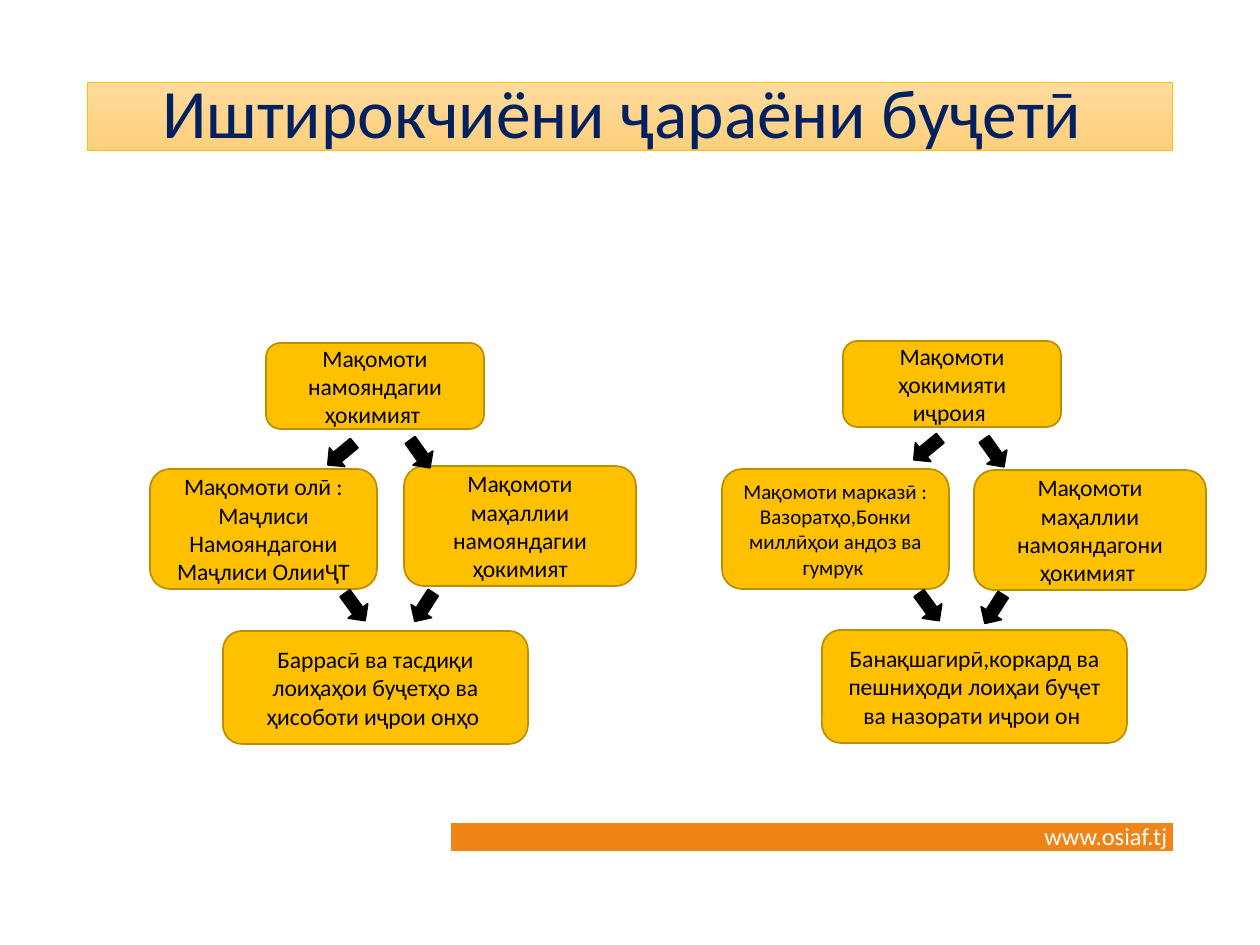
from typing import NamedTuple

from lxml.etree import SubElement
from pptx import Presentation
from pptx.dml.color import RGBColor
from pptx.enum.shapes import MSO_CONNECTOR, MSO_SHAPE
from pptx.enum.text import MSO_ANCHOR, PP_ALIGN
from pptx.oxml.ns import qn
from pptx.util import Emu, Pt

EMU_PER_INCH = 914400
PX_PER_INCH = 126
FONT = "Calibri"
BLACK = RGBColor(0x00, 0x00, 0x00)
WHITE = RGBColor(0xFF, 0xFF, 0xFF)
NAVY = RGBColor(0x00, 0x20, 0x60)
GOLD = RGBColor(0xFF, 0xC0, 0x00)
DARK_GOLD = RGBColor(0xBD, 0x8E, 0x00)
ORANGE = RGBColor(0xF0, 0x84, 0x16)
TITLE_TOP = RGBColor(0xFF, 0xDB, 0x9E)
TITLE_BOTTOM = RGBColor(0xFF, 0xD0, 0x7C)

HEAD_SIZE = (218, 86)
LEVEL_SIZE = (227, 120)
LOCAL_SIZE = (232, 120)
ROLE_SIZE = (305, 113)
ARROW_SIZE = (34, 24)


class Body(NamedTuple):
    left: int
    top: int
    size: tuple[int, int]
    text: str
    points: float = 13.5


class Arrow(NamedTuple):
    left: int
    top: int
    angle: float


BODIES = [
    Body(266, 343, HEAD_SIZE, "Мақомоти намояндагии ҳокимият "),
    Body(150, 469, LEVEL_SIZE, "Мақомоти олӣ : Маҷлиси Намояндагони Маҷлиси ОлииҶТ"),
    Body(404, 466, LOCAL_SIZE, "Мақомоти маҳаллии намояндагии ҳокимият"),
    Body(223, 631, ROLE_SIZE, "Баррасӣ ва тасдиқи лоиҳаҳои буҷетҳо ва ҳисоботи иҷрои онҳо "),
    Body(843, 341, HEAD_SIZE, "Мақомоти ҳокимияти иҷроия "),
    Body(722, 469, LEVEL_SIZE,
         "Мақомоти марказӣ : Вазоратҳо,Бонки миллӣҳои андоз ва гумрук ", 12),
    Body(974, 470, LOCAL_SIZE, "Мақомоти маҳаллии намояндагони ҳокимият "),
    Body(822, 630, ROLE_SIZE,
         "Банақшагирӣ,коркард ва пешниҳоди лоиҳаи буҷет ва назорати иҷрои он "),
]

ARROWS = [
    Arrow(324, 442, 140.5),
    Arrow(403, 442, 54.5),
    Arrow(338, 595, 53.7),
    Arrow(407, 595, 122.5),
    Arrow(910, 437, 140.5),
    Arrow(977, 441, 54.5),
    Arrow(912, 595, 53.7),
    Arrow(977, 597, 122.5),
]


def px(length: int) -> Emu:
    return Emu(round(length * EMU_PER_INCH / PX_PER_INCH))


def write(shape, text: str, *, points: float, color: RGBColor,
          align=PP_ALIGN.CENTER, anchor=MSO_ANCHOR.MIDDLE, spacing: float = 1.0) -> None:
    frame = shape.text_frame
    frame.word_wrap = True
    frame.vertical_anchor = anchor
    para = frame.paragraphs[0]
    para.alignment = align
    para.line_spacing = spacing
    span = para.add_run()
    span.text = text
    span.font.name = FONT
    span.font.size = Pt(points)
    span.font.color.rgb = color


def add_preset(slide, preset, left: int, top: int, size: tuple[int, int], *,
               fill: RGBColor, line: RGBColor, weight: float = 1):
    shape = slide.shapes.add_shape(preset, px(left), px(top), *map(px, size))
    shape.shadow.inherit = False
    shape.fill.solid()
    shape.fill.fore_color.rgb = fill
    shape.line.color.rgb = line
    shape.line.width = Pt(weight)
    return shape


def add_footer(slide) -> None:
    bar = slide.shapes.add_connector(
        MSO_CONNECTOR.STRAIGHT, px(451), px(837), px(1173), px(837))
    bar.line.color.rgb = ORANGE
    bar.line.width = Pt(16)
    SubElement(bar._element.spPr, qn("a:effectLst"))
    address = slide.shapes.add_textbox(px(1032), px(815), px(200), px(43))
    write(address, "www.osiaf.tj", points=14, color=WHITE,
          align=PP_ALIGN.LEFT, anchor=MSO_ANCHOR.TOP)


def add_title(slide) -> None:
    title = add_preset(slide, MSO_SHAPE.RECTANGLE, 87, 82, (1086, 68),
                       fill=TITLE_TOP, line=GOLD, weight=0.5)
    title.fill.gradient()
    title.fill.gradient_angle = 270
    for stop, position, color in zip(
            title.fill.gradient_stops, (0, 1), (TITLE_TOP, TITLE_BOTTOM)):
        stop.position = position
        stop.color.rgb = color
    write(title, "Иштирокчиёни ҷараёни буҷетӣ ", points=39.6, color=NAVY, spacing=0.9)


def add_body(slide, body: Body) -> None:
    box = add_preset(slide, MSO_SHAPE.ROUNDED_RECTANGLE, body.left, body.top, body.size,
                     fill=GOLD, line=DARK_GOLD)
    write(box, body.text, points=body.points, color=BLACK)


def add_arrow(slide, arrow: Arrow) -> None:
    shape = add_preset(slide, MSO_SHAPE.RIGHT_ARROW, arrow.left, arrow.top, ARROW_SIZE,
                       fill=BLACK, line=BLACK)
    shape.rotation = arrow.angle


def main() -> None:
    deck = Presentation()
    deck.slide_width, deck.slide_height = px(1260), px(945)
    slide = deck.slides.add_slide(deck.slide_layouts[6])
    add_footer(slide)
    add_title(slide)
    for body in BODIES:
        add_body(slide, body)
    for arrow in ARROWS:
        add_arrow(slide, arrow)
    deck.save("out.pptx")


if __name__ == "__main__":
    main()
